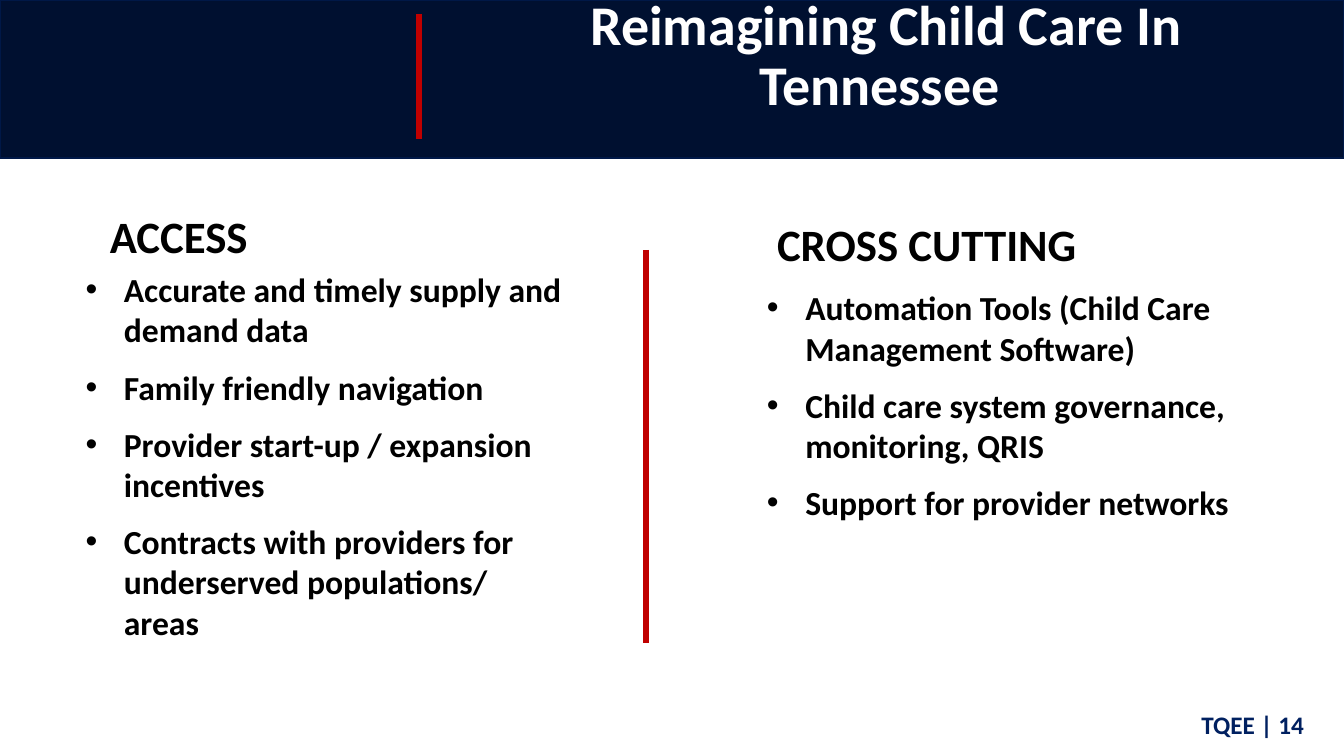
import pptx
import pptx.dml.color
import pptx.enum.shapes
import pptx.enum.text
import pptx.oxml
import pptx.oxml.ns
import pptx.util
from lxml import etree

RGBColor = pptx.dml.color.RGBColor
NAVY = RGBColor(0x00, 0x10, 0x30)
NAVY_EDGE = RGBColor(0x00, 0x18, 0x47)
BLUE = RGBColor(0x00, 0x20, 0x60)
RED = RGBColor(0xC0, 0x00, 0x00)
BLACK = RGBColor(0x00, 0x00, 0x00)
WHITE = RGBColor(0xFF, 0xFF, 0xFF)

ALIGN = pptx.enum.text.PP_ALIGN
ANCHOR = pptx.enum.text.MSO_ANCHOR
FIT = pptx.enum.text.MSO_AUTO_SIZE

COLUMNS = ROWS = 100
LEFT, RIGHT = "left", "right"


def add_bullet(p, indent):
    """Give a paragraph a round bullet with a hanging indent."""
    pPr = p._p.get_or_add_pPr()
    pPr.set("marL", str(indent))
    pPr.set("indent", str(-indent))
    font = etree.SubElement(pPr, pptx.oxml.ns.qn("a:buFont"))
    font.set("typeface", "Arial")
    etree.SubElement(pPr, pptx.oxml.ns.qn("a:buChar")).set("char", "•")


def write(p, text, *, size, color=BLACK, font="Calibri", bold=True,
          align=ALIGN.LEFT, spacing=None, before=0):
    p.alignment = align
    p.space_before = pptx.util.Pt(before)
    if spacing:
        p.line_spacing = spacing
    r = p.add_run()
    r.text = text
    r.font.name = font
    r.font.size = pptx.util.Pt(size)
    r.font.bold = bold
    r.font.color.rgb = color


class SlideBuilder:
    """Places elements on a grid of 100 columns by 100 rows."""

    bullet_indent = pptx.util.Inches(0.38)
    rule_width = pptx.util.Pt(4.5)

    def __init__(self, prs):
        self.column = prs.slide_width / COLUMNS
        self.row = prs.slide_height / ROWS
        self.s = prs.slides.add_slide(prs.slide_layouts[6])

    def place(self, x, y, w, h):
        return (round(x * self.column), round(y * self.row),
                round(w * self.column), round(h * self.row))

    def band(self, x, y, w, h):
        sp = self.s.shapes.add_shape(
            pptx.enum.shapes.MSO_SHAPE.RECTANGLE, *self.place(x, y, w, h))
        sp.shadow.inherit = False
        sp.fill.solid()
        sp.fill.fore_color.rgb = NAVY
        sp.line.color.rgb = NAVY_EDGE
        sp.line.width = pptx.util.Pt(1)

    def vertical_rule(self, x, top, bottom):
        left, start, _, end = self.place(x, top, 0, bottom)
        line = self.s.shapes.add_connector(
            pptx.enum.shapes.MSO_CONNECTOR.STRAIGHT, left, start, left, end)
        line.line.color.rgb = RED
        line.line.width = self.rule_width
        etree.SubElement(line._element.spPr, pptx.oxml.ns.qn("a:effectLst"))

    def box(self, x, y, w, h, anchor=ANCHOR.TOP, fit=FIT.SHAPE_TO_FIT_TEXT):
        tf = self.s.shapes.add_textbox(*self.place(x, y, w, h)).text_frame
        tf.word_wrap = True
        tf.auto_size = fit
        tf.vertical_anchor = anchor
        return tf

    def title(self, text, x, y, w, h):
        tf = self.box(x, y, w, h, anchor=ANCHOR.BOTTOM, fit=FIT.NONE)
        write(tf.paragraphs[0], text, size=40, color=WHITE,
              align=ALIGN.CENTER, spacing=0.9)

    def heading(self, text, x, y):
        write(self.box(x, y, 26.25, 8.53).paragraphs[0], text, size=32)

    def bullets(self, items, x, y, w, h):
        tf = self.box(x, y, w, h)
        for i, item in enumerate(items):
            p = tf.add_paragraph() if i else tf.paragraphs[0]
            add_bullet(p, self.bullet_indent)
            write(p, item, size=24, before=12 if i else 0)

    def footer(self, text, x, y, w, h):
        write(self.box(x, y, w, h).paragraphs[0], text, size=18, color=BLUE)


def main():
    prs = pptx.Presentation()
    prs.slide_width = pptx.util.Inches(13.33)
    prs.slide_height = pptx.util.Inches(7.5)
    slide = SlideBuilder(prs)

    slide.band(0, 0, COLUMNS, 20.93)
    slide.vertical_rule(31.2, 1.87, 18.4)
    slide.title(" Reimagining Child Care In Tennessee", 33.38, 3.2, 64.13, 13.07)

    slide.heading("ACCESS", 7.43, 26.93)
    slide.bullets([
        "Accurate and timely supply and demand data",
        "Family friendly navigation",
        "Provider start-up / expansion incentives",
        "Contracts with providers for underserved populations/ areas",
    ], 5.63, 34.93, 37.2, 56.53)

    slide.vertical_rule(48.08, 33.07, 85.07)

    slide.heading("CROSS CUTTING", 57.08, 28)
    slide.bullets([
        "Automation Tools (Child Care Management Software)",
        "Child care system governance, monitoring, QRIS",
        "Support for provider networks",
    ], 56.33, 37.33, 41.25, 32.8)

    slide.footer("TQEE | 14", 88.65, 93.2, 9.75, 5.33)
    prs.save("out.pptx")


if __name__ == "__main__":
    main()
